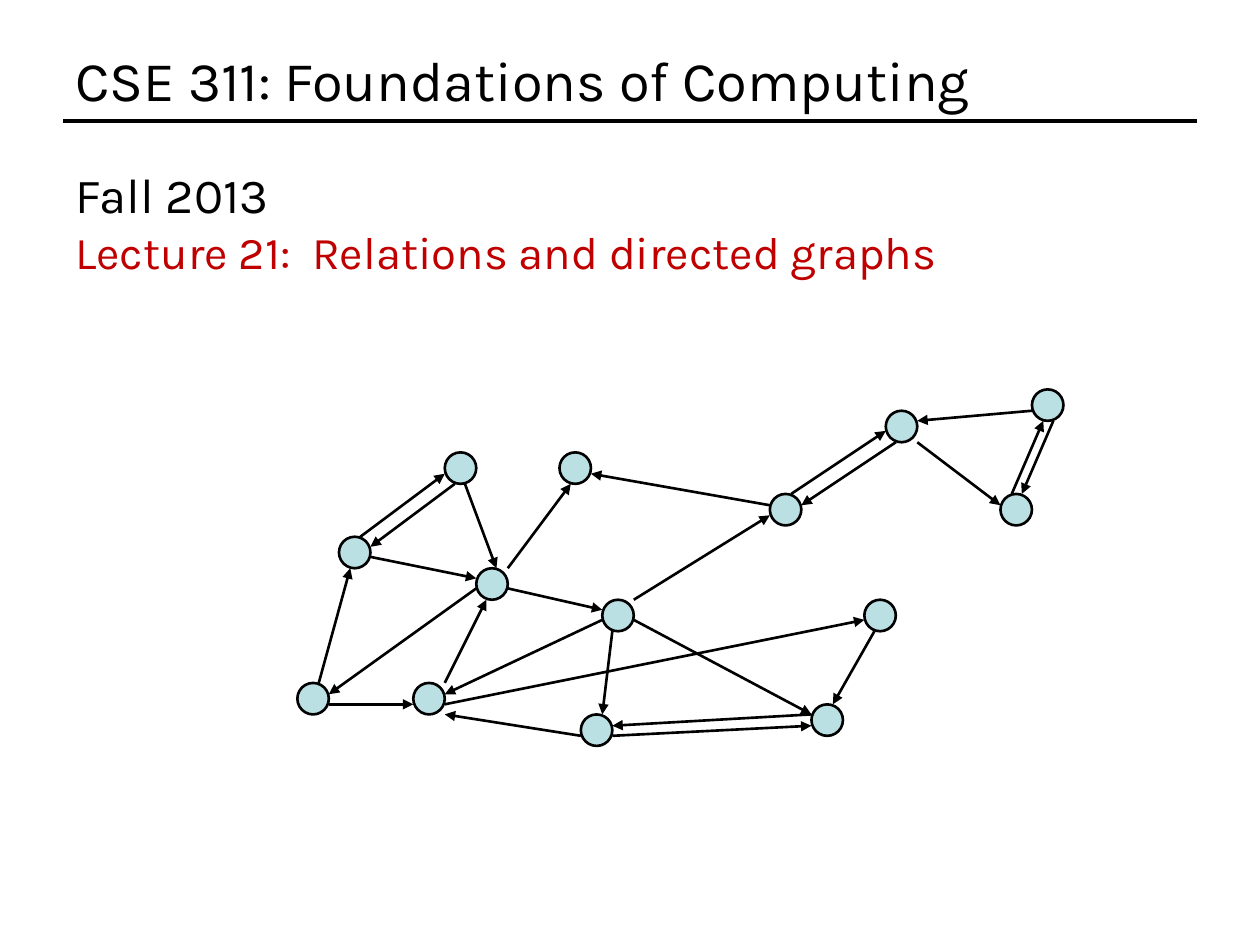
from typing import NamedTuple

from lxml import etree
from pptx import Presentation
from pptx.dml.color import RGBColor
from pptx.enum.shapes import MSO_CONNECTOR, MSO_SHAPE
from pptx.enum.text import MSO_ANCHOR
from pptx.oxml.ns import qn
from pptx.util import Inches, Pt

STRAIGHT = MSO_CONNECTOR.STRAIGHT
ELLIPSE = MSO_SHAPE.OVAL
TOP, MIDDLE = MSO_ANCHOR.TOP, MSO_ANCHOR.MIDDLE

FONT = "Karla"
BLACK, RED, NODE_FILL = "000000", "C00000", "BBE0E3"
NODE_SIZE = 0.25
GRAPH_LINE = 1.5


class Node(NamedTuple):
    left: float
    top: float


class Edge(NamedTuple):
    """A directed edge from its start to its arrow tip."""
    start_x: float
    start_y: float
    tip_x: float
    tip_y: float


class TextLine(NamedTuple):
    text: str
    size: float
    color: str = BLACK


NODES = [
    Node(2.69, 4.26), Node(4.78, 4.76), Node(2.36, 5.42), Node(6.11, 3.92),
    Node(3.78, 4.51), Node(3.28, 5.42), Node(4.61, 5.67), Node(4.44, 3.59),
    Node(7.03, 3.26), Node(6.86, 4.76), Node(3.53, 3.59), Node(6.44, 5.59),
    Node(8.19, 3.09), Node(7.94, 3.92),
]

EDGES = [
    # Left cluster
    Edge(3.78, 4.67, 2.61, 5.51),
    Edge(3.53, 5.42, 3.86, 4.76),
    Edge(2.61, 5.59, 3.28, 5.59),
    Edge(2.53, 5.42, 2.78, 4.51),
    Edge(2.86, 4.26, 3.53, 3.76),
    Edge(3.61, 3.84, 2.94, 4.34),
    Edge(2.94, 4.42, 3.78, 4.59),
    Edge(3.69, 3.84, 3.94, 4.51),
    # Middle cluster
    Edge(4.03, 4.51, 4.53, 3.84),
    Edge(4.03, 4.67, 4.78, 4.84),
    Edge(4.78, 4.92, 3.53, 5.51),
    Edge(3.53, 5.59, 6.86, 4.92),
    Edge(4.61, 5.84, 3.53, 5.67),
    Edge(4.86, 5.01, 4.78, 5.67),
    Edge(6.44, 5.67, 4.86, 5.76),
    Edge(4.86, 5.84, 6.44, 5.76),
    Edge(6.94, 5.01, 6.61, 5.59),
    Edge(5.03, 4.92, 6.44, 5.67),
    Edge(5.03, 4.76, 6.11, 4.09),
    Edge(6.11, 4.01, 4.69, 3.76),
    # Right cluster
    Edge(7.11, 3.51, 6.36, 4.01),
    Edge(6.28, 3.92, 7.03, 3.42),
    Edge(7.28, 3.51, 7.94, 4.01),
    Edge(8.19, 3.26, 7.28, 3.34),
    Edge(8.36, 3.34, 8.11, 3.92),
    Edge(8.03, 3.92, 8.28, 3.34),
]


def rgb(color: str) -> RGBColor:
    return RGBColor.from_string(color)


def add_text(slide, lines: list[TextLine], *, left: float, top: float,
             width: float, height: float, anchor=TOP) -> None:
    box = slide.shapes.add_textbox(
        Inches(left), Inches(top), Inches(width), Inches(height))
    frame = box.text_frame
    frame.word_wrap = True
    frame.vertical_anchor = anchor
    for index, line in enumerate(lines):
        paragraph = frame.add_paragraph() if index else frame.paragraphs[0]
        run = paragraph.add_run()
        run.text = line.text
        run.font.name = FONT
        run.font.size = Pt(line.size)
        run.font.color.rgb = rgb(line.color)


def add_line(slide, edge: Edge, *, width: float, arrow: bool) -> None:
    connector = slide.shapes.add_connector(
        STRAIGHT, *(Inches(value) for value in edge))
    connector.line.color.rgb = rgb(BLACK)
    connector.line.width = Pt(width)
    properties = connector._element.spPr
    if arrow:
        line = properties.find(qn("a:ln"))
        etree.SubElement(line, qn("a:tailEnd"), type="triangle")
    etree.SubElement(properties, qn("a:effectLst"))


def add_node(slide, node: Node) -> None:
    shape = slide.shapes.add_shape(
        ELLIPSE, Inches(node.left), Inches(node.top),
        Inches(NODE_SIZE), Inches(NODE_SIZE))
    shape.shadow.inherit = False
    shape.fill.solid()
    shape.fill.fore_color.rgb = rgb(NODE_FILL)
    shape.line.color.rgb = rgb(BLACK)
    shape.line.width = Pt(GRAPH_LINE)


def main() -> None:
    presentation = Presentation()
    presentation.slide_width = Inches(10)
    presentation.slide_height = Inches(7.5)
    slide = presentation.slides.add_slide(presentation.slide_layouts[6])

    # Title and rule
    add_line(slide, Edge(0.5, 0.96, 9.5, 0.96), width=2, arrow=False)
    add_text(slide, [TextLine("CSE 311: Foundations of Computing", 32)],
             left=0.5, top=0.3, width=9, height=0.66, anchor=MIDDLE)

    # Term and lecture
    add_text(slide, [
        TextLine("Fall 2013", 28),
        TextLine("Lecture 21:  Relations and directed graphs", 26, RED),
    ], left=0.5, top=1.26, width=9.27, height=1.01)

    # Directed graph
    for node in NODES:
        add_node(slide, node)
    for edge in EDGES:
        add_line(slide, edge, width=GRAPH_LINE, arrow=True)

    presentation.save("out.pptx")


if __name__ == "__main__":
    main()
